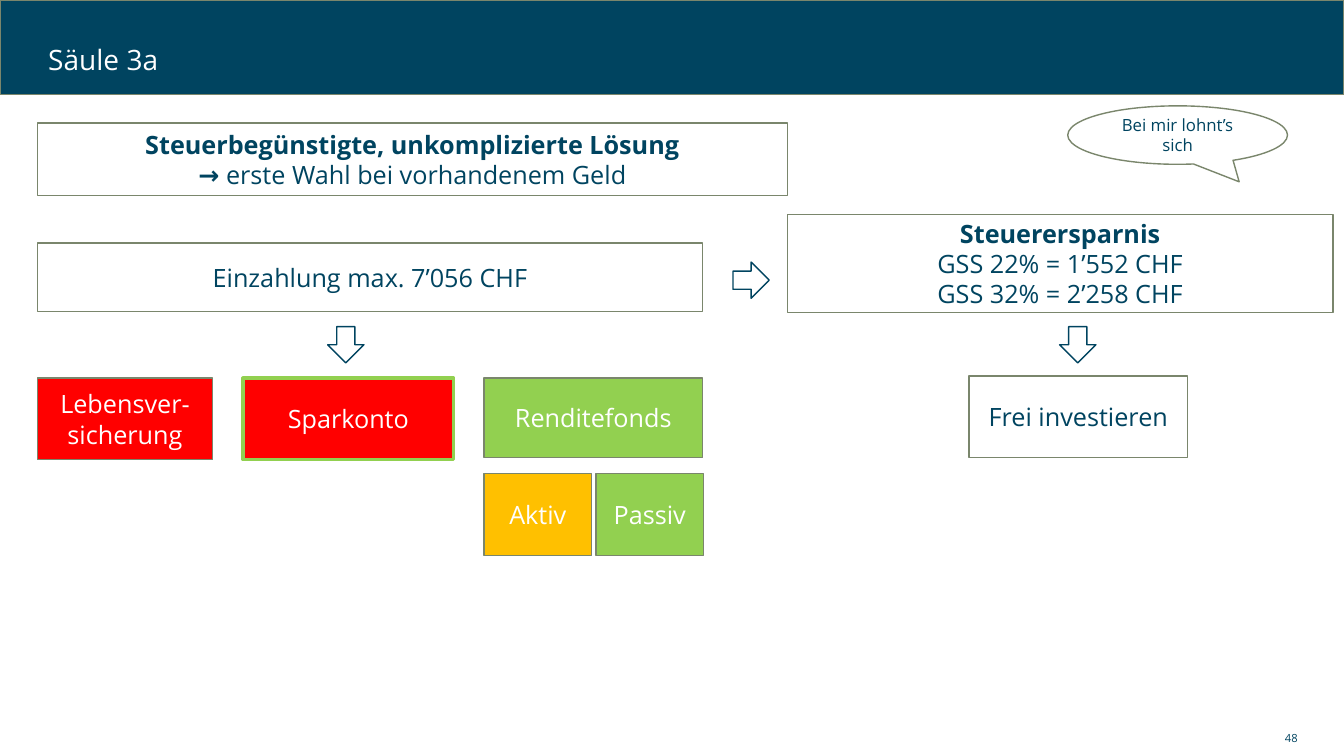
from dataclasses import dataclass

from pptx import Presentation
from pptx.dml.color import RGBColor as RGB
from pptx.enum.shapes import MSO_SHAPE as Shape
from pptx.enum.text import MSO_ANCHOR as Anchor, PP_ALIGN as Align
from pptx.util import Inches, Pt


@dataclass(frozen=True)
class Theme:
    font: str = "Open Sans"
    navy: RGB = RGB(0x00, 0x44, 0x60)
    olive: RGB = RGB(0x7A, 0x86, 0x6C)
    white: RGB = RGB(0xFF, 0xFF, 0xFF)
    red: RGB = RGB(0xFF, 0x00, 0x00)
    green: RGB = RGB(0x92, 0xD0, 0x50)
    amber: RGB = RGB(0xFF, 0xC0, 0x00)
    title: int = 20
    body: int = 18
    speech: int = 12
    footer: int = 8


class SlideBuilder:
    def __init__(self, slide, theme):
        self.slide = slide
        self.theme = theme

    def set_text(self, frame, lines, size, color, align):
        frame.word_wrap = True
        frame.vertical_anchor = Anchor.MIDDLE
        for index, line in enumerate(lines):
            paragraph = frame.add_paragraph() if index else frame.paragraphs[0]
            paragraph.alignment = align
            paragraph.font.name = self.theme.font
            paragraph.font.size = Pt(size)
            paragraph.font.color.rgb = color
            for words, bold in [(line, False)] if isinstance(line, str) else line:
                run = paragraph.add_run()
                run.text = words
                if bold:
                    run.font.bold = True

    def shape(self, kind, at, fill=None, line=None, weight=1):
        shape = self.slide.shapes.add_shape(kind, *map(Inches, at))
        shape.shadow.inherit = False
        if fill is None:
            shape.fill.background()
        else:
            shape.fill.solid()
            shape.fill.fore_color.rgb = fill
        shape.line.color.rgb = line or self.theme.olive
        shape.line.width = Pt(weight)
        return shape

    def box(self, at, *lines, fill=None, line=None, weight=1):
        box = self.shape(Shape.RECTANGLE, at, fill, line, weight)
        color = self.theme.white if fill else self.theme.navy
        self.set_text(box.text_frame, lines, self.theme.body, color, Align.CENTER)

    def arrow(self, left, top, rotation=0):
        arrow = self.shape(Shape.DOWN_ARROW, (left, top, 0.36, 0.36), line=self.theme.navy)
        arrow.rotation = rotation

    def callout(self, at, words, tip):
        callout = self.shape(Shape.OVAL_CALLOUT, at, self.theme.white)
        for index, offset in enumerate(tip):
            callout.adjustments[index] = offset
        self.set_text(callout.text_frame, [words], self.theme.speech, self.theme.navy, Align.CENTER)

    def label(self, at, words, size, color, align, spacing=1.0):
        label = self.slide.shapes.add_textbox(*map(Inches, at))
        self.set_text(label.text_frame, [words], size, color, align)
        label.text_frame.paragraphs[0].line_spacing = spacing


def main():
    deck = Presentation()
    deck.slide_width, deck.slide_height = Inches(13.33), Inches(7.5)
    theme = Theme()
    page = SlideBuilder(deck.slides.add_slide(deck.slide_layouts[6]), theme)

    page.shape(Shape.RECTANGLE, (0, 0, 13.33, 0.94), theme.navy)
    page.label((0.38, 0.34, 11.02, 0.54), "Säule 3a", theme.title, theme.white, Align.LEFT, 0.9)

    page.box(
        (0.37, 1.22, 7.44, 0.72),
        [("Steuerbegünstigte, unkomplizierte Lösung", True)],
        [("→ ", True), ("erste Wahl bei vorhandenem Geld", False)],
    )
    page.box((0.37, 2.41, 6.6, 0.68), "Einzahlung max. 7’056 CHF")
    page.box(
        (7.81, 2.13, 5.41, 0.97),
        [("Steuerersparnis", True)],
        "GSS 22% = 1’552 CHF",
        "GSS 32% = 2’258 CHF",
    )

    page.arrow(7.27, 2.6, 270)
    for left in (3.25, 10.51):
        page.arrow(left, 3.24)

    page.box((0.37, 3.75, 1.74, 0.81), "Lebensver-sicherung", fill=theme.red)
    page.box((2.41, 3.75, 2.09, 0.81), "Sparkonto", fill=theme.red, line=theme.green, weight=2.25)
    page.box((4.8, 3.75, 2.17, 0.79), "Renditefonds", fill=theme.green)
    page.box((9.61, 3.73, 2.17, 0.81), "Frei investieren")
    for left, strategy, fill in ((4.8, "Aktiv", theme.amber), (5.91, "Passiv", theme.green)):
        page.box((left, 4.7, 1.07, 0.81), strategy, fill=fill)

    page.callout((10.59, 1.05, 2.18, 0.58), "Bei mir lohnt’s sich", (0.28, 0.8))
    page.label((9.42, 7.2, 3.55, 0.24), "48", theme.footer, theme.navy, Align.RIGHT)

    deck.save("out.pptx")


if __name__ == "__main__":
    main()
